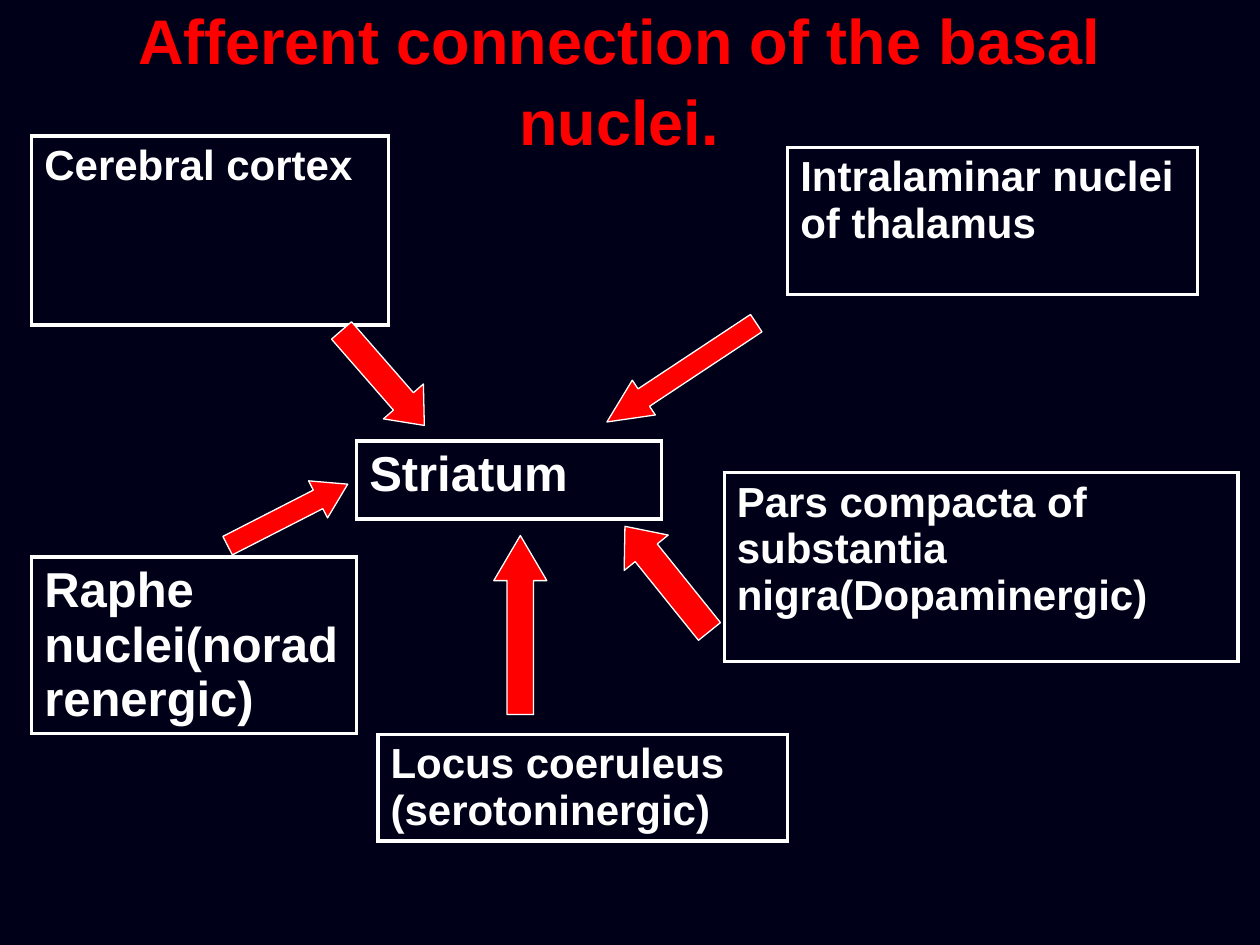
from lxml.etree import SubElement
from pptx import Presentation
from pptx.dml.color import RGBColor
from pptx.enum.shapes import MSO_SHAPE
from pptx.enum.text import MSO_ANCHOR, PP_ALIGN
from pptx.oxml.ns import qn
from pptx.util import Cm, Pt

NAVY = RGBColor(0x00, 0x00, 0x18)
RED = RGBColor(0xFF, 0x00, 0x00)
WHITE = RGBColor(0xFF, 0xFF, 0xFF)
FONT = "Arial"

TITLE = "Afferent connection of the basal nuclei."

# Boxes: text, size in points, left, top, width, height in cm
BOXES = [
    ("Striatum", 28, 7.19, 8.89, 6.15, 1.57),
    ("Intralaminar nuclei of thalamus", 24, 15.88, 2.97, 8.26, 2.97),
    ("Cerebral cortex", 24, 0.64, 2.74, 7.19, 3.81),
    ("Pars compacta of substantia nigra(Dopaminergic)", 24, 14.6, 9.53, 10.36, 3.81),
    ("Raphe nuclei(noradrenergic)", 28, 0.64, 11.23, 6.55, 3.33),
    ("Locus coeruleus (serotoninergic)", 24, 7.62, 14.81, 8.26, 2.11),
]

# Arrows into the striatum: centre x, centre y, length, thickness in cm,
# clockwise angle from pointing right, head length relative to thickness
ARROWS = [
    (7.72, 7.62, 2.54, 1.07, 48.9, 0.6),
    (13.74, 7.51, 3.61, 0.84, 146.5, 1.06),
    (10.49, 12.6, 3.61, 1.07, 270, 0.85),
    (5.8, 10.38, 2.72, 0.84, 332.9, 0.8),
    (13.45, 11.67, 2.72, 1.14, 231.2, 0.6),
]


def write(paragraph, text, size, color):
    run = paragraph.add_run()
    run.text = text
    run.font.name = FONT
    run.font.size = Pt(size)
    run.font.bold = True
    run.font.color.rgb = color


def set_borders(cell, color, width):
    properties = cell._tc.get_or_add_tcPr()
    for side in ("a:lnL", "a:lnR", "a:lnT", "a:lnB"):
        line = SubElement(properties, qn(side), w=str(Pt(width)))
        fill = SubElement(line, qn("a:solidFill"))
        SubElement(fill, qn("a:srgbClr"), val=str(color))


def add_box(slide, text, size, left, top, width, height):
    table = slide.shapes.add_table(
        1, 1, Cm(left), Cm(top), Cm(width), Cm(height)).table
    table.first_row = False
    table.horz_banding = False
    cell = table.cell(0, 0)
    set_borders(cell, WHITE, 2.25)
    cell.fill.background()
    write(cell.text_frame.paragraphs[0], text, size, WHITE)


def add_arrow(slide, center_x, center_y, length, thickness, angle, head):
    shape = slide.shapes.add_shape(
        MSO_SHAPE.RIGHT_ARROW,
        Cm(center_x - length / 2), Cm(center_y - thickness / 2),
        Cm(length), Cm(thickness))
    shape.rotation = angle
    shape.adjustments[0] = 0.5
    shape.adjustments[1] = head
    shape.shadow.inherit = False
    shape.fill.solid()
    shape.fill.fore_color.rgb = RED
    shape.line.color.rgb = WHITE
    shape.line.width = Pt(0.75)


def main():
    presentation = Presentation()
    presentation.slide_width = Cm(25.4)
    presentation.slide_height = Cm(19.05)
    slide = presentation.slides.add_slide(presentation.slide_layouts[5])
    slide.background.fill.solid()
    slide.background.fill.fore_color.rgb = NAVY

    # Title
    title = slide.shapes.title
    title.left, title.top = Cm(1.27), Cm(0.76)
    title.width, title.height = Cm(22.43), Cm(1.57)
    title.text_frame.word_wrap = True
    title.text_frame.vertical_anchor = MSO_ANCHOR.MIDDLE
    paragraph = title.text_frame.paragraphs[0]
    paragraph.alignment = PP_ALIGN.CENTER
    paragraph.line_spacing = 1.08
    write(paragraph, TITLE, 36, RED)

    # Nuclei and the arrows between them
    for box in BOXES:
        add_box(slide, *box)
    for arrow in ARROWS:
        add_arrow(slide, *arrow)

    presentation.save("out.pptx")


if __name__ == "__main__":
    main()
